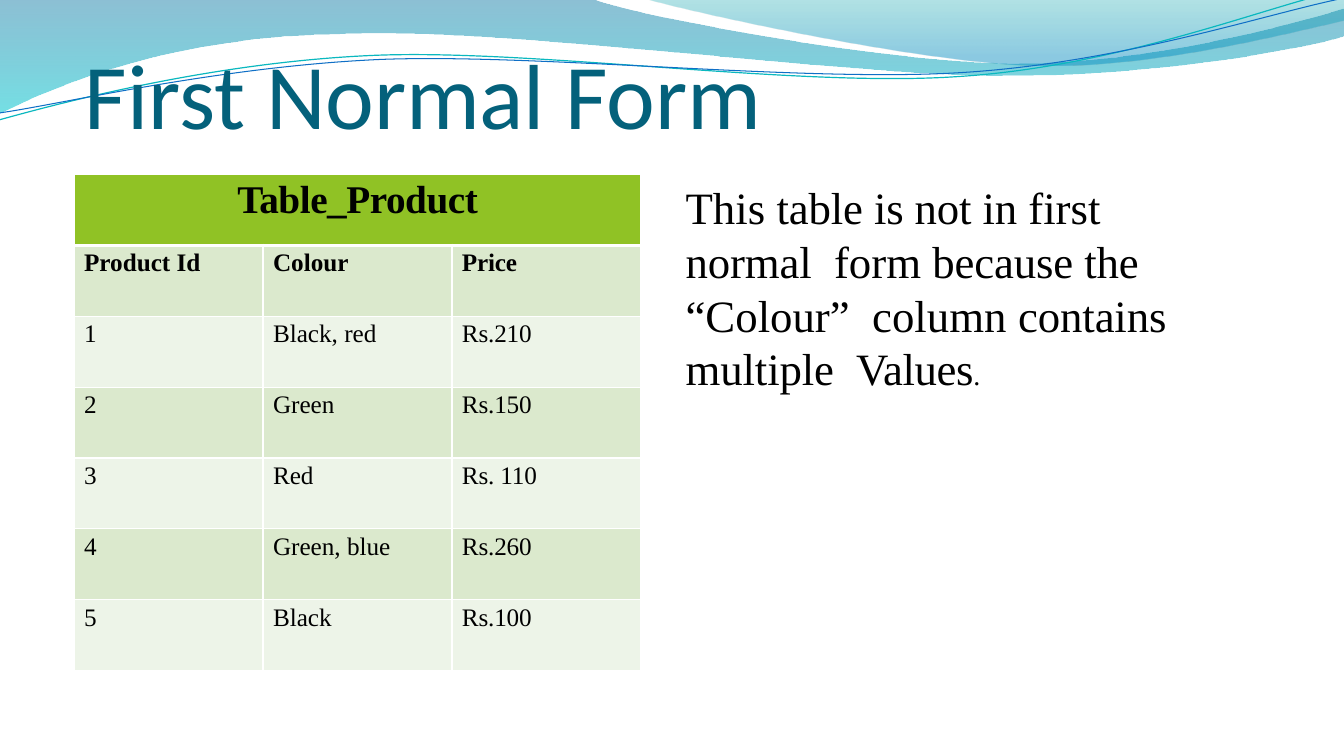
from itertools import chain

from lxml import etree
from pptx import Presentation, util as u
from pptx.dml.color import RGBColor
from pptx.enum import text as t
from pptx.oxml.ns import qn

COLORS = {
    "title": "04617B", "ink": "000000", "border": "FFFFFF",
    "header": "90C225", "odd_row": "DBE9CD", "even_row": "EDF4E8",
    "teal_line": "0AB8BF", "blue_line": "0F6FC6",
    "deep_blue": "0074A1", "turquoise": "00C6CF", "sea": "00A1A9", "sky": "008BBF",
}
INCH = 2.54
UNITS = 1000
BODY_FONT = "Times New Roman"

LEFT_WAVE = [(0, 0), (5.87, -0.01), (6.34, 0.17, 8.85, 0.63, 10.11, 0.63),
             (11.38, 0.63, 12.78, 0.26, 13.33, 0.09), (13.35, 0.36),
             (13.11, 0.44, 11.6, 0.76, 9.94, 0.75), (8.29, 0.75, 5.09, 0.28, 3.43, 0.34),
             (1.72, 0.36, 0.61, 0.83, -0.01, 1.13), (0, 0)]
RIGHT_WAVE = [(6.39, -0.01), (6.79, 0.11, 9.09, 0.62, 10.25, 0.65),
              (11.41, 0.69, 12.82, 0.32, 13.33, 0.21), (13.33, 0), (6.39, -0.01)]
TEAL_CURVE = [(-0.01, 1.19), (0.64, 1.01, 2.11, 0.62, 3.69, 0.55),
              (5.27, 0.48, 7.9, 0.87, 9.5, 0.76), (11.1, 0.66, 12.52, 0.08, 13.31, -0.1)]
BLUE_CURVE = [(0, 1.12), (0.63, 1.03, 2.18, 0.66, 3.78, 0.59),
              (5.37, 0.53, 7.96, 0.82, 9.55, 0.72), (11.15, 0.62, 12.55, 0.14, 13.34, -0.02)]

TITLE = [("First ", 0), ("Normal ", -10), ("Form", 0)]
EXPLANATION = [
    ("This ", 0), ("table is not in ", -10), ("first ", 0), ("normal  ", -10), ("form ", 0),
    ("because the ", -10), ("“Colour”  column ", 0), ("contains multiple  ", -10),
    ("Values", -30), (".", -30),
]
PRODUCTS = [
    ("Product Id", "Colour", "Price"),
    ("1", "Black, red", "Rs.210"),
    ("2", "Green", "Rs.150"),
    ("3", "Red", "Rs. 110"),
    ("4", "Green, blue", "Rs.260"),
    ("5", "Black", "Rs.100"),
]
COLUMN_SPACING = (0, 0, -10)


def rgb(name):
    """Return the named colour."""
    return RGBColor.from_string(COLORS[name])


def add_outline(slide, box, outline, closed):
    """Draw straight and cubic segments from the corner of the box."""
    left, top = box
    flat = [value * UNITS for value in chain.from_iterable(outline)]
    points = list(zip(flat[::2], flat[1::2]))
    builder = slide.shapes.build_freeform(*points[0], scale=u.Cm(INCH) / UNITS)
    builder.add_line_segments(points[1:], close=closed)
    shape = builder.convert_to_shape(u.Cm(left), u.Cm(top))
    shape.shadow.inherit = False
    vertices = iter(list(shape._element.iter(qn("a:lnTo"))))
    for segment in outline[1:]:
        vertex = next(vertices)
        if len(segment) == 6:
            vertex.tag = qn("a:cubicBezTo")
            for _ in range(2):
                following = next(vertices)
                vertex.append(following[0])
                following.getparent().remove(following)
    return shape


def add_waves(slide, box):
    """Draw the two translucent waves and the two thin curves."""
    waves = [
        (LEFT_WAVE, (("deep_blue", 0, 45), ("turquoise", 1, 55))),
        (RIGHT_WAVE, (("sea", 0, 30), ("sky", 0.8, 45))),
    ]
    for outline, shades in waves:
        wave = add_outline(slide, box, outline, True)
        wave.line.fill.background()
        wave.fill.gradient()
        wave.fill.gradient_angle = 270
        for stop, (shade, position, _) in zip(wave.fill.gradient_stops, shades):
            stop.color.rgb = rgb(shade)
            stop.position = position
        for color, (_, _, opacity) in zip(wave._element.iter(qn("a:srgbClr")), shades):
            etree.SubElement(color, qn("a:alpha")).set("val", str(opacity * 1000))
    for outline, shade, width in ((TEAL_CURVE, "teal_line", 0.85), (BLUE_CURVE, "blue_line", 0.75)):
        curve = add_outline(slide, box, outline, False)
        curve.fill.background()
        curve.line.color.rgb = rgb(shade)
        curve.line.width = u.Pt(width)


def write(paragraph, pieces, size, font, color, before, bold=False, indent=0.03):
    """Fill a paragraph with pieces of text and letter spacing."""
    paragraph.space_before = u.Pt(before)
    paragraph._p.get_or_add_pPr().set("marL", str(u.Cm(indent)))
    for words, spacing in pieces:
        run = paragraph.add_run()
        run.text = words
        run.font.size = u.Pt(size)
        run.font.name = font
        run.font.bold = bold
        run.font.color.rgb = rgb(color)
        run._r.get_or_add_rPr().set("spc", str(spacing))


def add_text(slide, box, anchor):
    """Add a wrapping text box and return its paragraph."""
    frame = slide.shapes.add_textbox(*(u.Cm(side) for side in box)).text_frame
    frame.word_wrap = True
    frame.auto_size = t.MSO_AUTO_SIZE.SHAPE_TO_FIT_TEXT
    frame.vertical_anchor = anchor
    frame.margin_left = frame.margin_right = frame.margin_bottom = 0
    frame.margin_top = u.Cm(0.03)
    return frame.paragraphs[0]


def add_title(slide, box):
    """Add the slide title."""
    title = add_text(slide, box, t.MSO_ANCHOR.BOTTOM)
    write(title, TITLE, 66, "Calibri", "title", 1)


def add_explanation(slide, box):
    """Add the explanation with its smaller full stop."""
    explanation = add_text(slide, box, t.MSO_ANCHOR.TOP)
    write(explanation, EXPLANATION, 32, BODY_FONT, "ink", 1.1)
    explanation.runs[-1].font.size = u.Pt(20)


def dress_cell(cell, fill, thick_side):
    """Set margins, borders and fill of a cell."""
    cell.margin_left = cell.margin_right = cell.margin_bottom = 0
    cell.margin_top = u.Cm(0.1)
    properties = cell._tc.get_or_add_tcPr()
    for side in "LRTB":
        border = etree.SubElement(properties, qn("a:ln" + side))
        border.set("w", str(u.Pt(3 if side == thick_side else 1)))
        solid = etree.SubElement(border, qn("a:solidFill"))
        etree.SubElement(solid, qn("a:srgbClr")).set("val", COLORS["border"])
    cell.fill.solid()
    cell.fill.fore_color.rgb = rgb(fill)


def add_product_table(slide, box):
    """Add the product table under its merged heading."""
    left, top, width, height = (u.Cm(side) for side in box)
    count = len(PRODUCTS) + 1
    table = slide.shapes.add_table(count, 3, left, top, width, height).table
    table.first_row = table.horz_banding = False
    for column in table.columns:
        column.width = width // 3
    for index, row in enumerate(table.rows):
        row.height = height // count
        fill = "header" if index == 0 else "odd_row" if index % 2 else "even_row"
        for cell in row.cells:
            dress_cell(cell, fill, {0: "B", 1: "T"}.get(index))
    heading = table.cell(0, 0)
    heading.merge(table.cell(0, 2))
    name = heading.text_frame.paragraphs[0]
    name.alignment = t.PP_ALIGN.CENTER
    write(name, [("Table_Product", -30)], 28, BODY_FONT, "ink", 2.8, True, 0)
    for index, product in enumerate(PRODUCTS):
        for cell, value, spacing in zip(table.rows[index + 1].cells, product, COLUMN_SPACING):
            entry = cell.text_frame.paragraphs[0]
            write(entry, [(value, spacing)], 18, BODY_FONT, "ink", 3.1, index == 0, 0.25)


def main():
    """Build and save the slide."""
    deck = Presentation()
    deck.slide_width, deck.slide_height = u.Cm(33.87), u.Cm(19.05)
    slide = deck.slides.add_slide(deck.slide_layouts[6])
    add_waves(slide, (0, 0))
    add_title(slide, (2.11, 0.9, 18.92, 2.84))
    add_product_table(slide, (1.87, 4.4, 14.28, 12.5))
    add_explanation(slide, (17.25, 4.5, 13.67, 5.51))
    deck.save("out.pptx")


if __name__ == "__main__":
    main()
